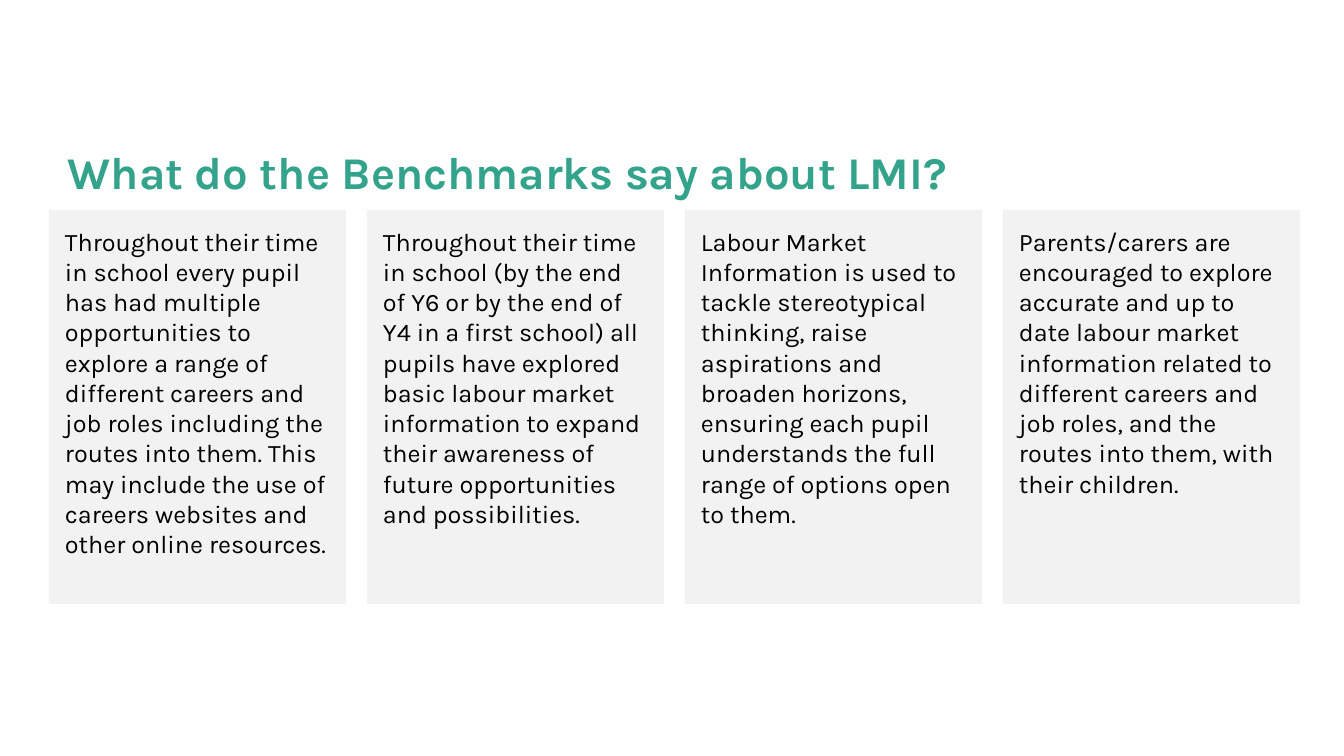
from pptx import Presentation
from pptx.dml.color import RGBColor
from pptx.enum.shapes import MSO_SHAPE as Shape
from pptx.enum.text import MSO_ANCHOR as Anchor, PP_ALIGN as Align
from pptx.util import Pt

PX = 914400 / 100.8
COLORS = {"title": "33A38C", "card": "F2F2F2", "text": "000000"}
TITLE_FONT = {"name": "Karla", "size": Pt(32.4), "bold": True}
CARD_FONT = {"name": "Karla", "size": Pt(18), "bold": False}
CARD_INSET = 16
CARD_GAP = 21

TITLE = "What do the Benchmarks say about LMI?"
BENCHMARKS = [
    "Throughout their time in school every pupil has had multiple opportunities "
    "to explore a range of different careers and job roles including the routes "
    "into them. This may include the use of careers websites and other online "
    "resources.",
    "Throughout their time in school (by the end of Y6 or by the end of Y4 in a "
    "first school) all pupils have explored basic labour market information to "
    "expand their awareness of future opportunities and possibilities.",
    "Labour Market Information is used to tackle stereotypical thinking, raise "
    "aspirations and broaden horizons, ensuring each pupil understands the full "
    "range of options open to them.",
    "Parents/carers are encouraged to explore accurate and up to date labour "
    "market information related to different careers and job roles, and the "
    "routes into them, with their children.",
]


def px(*lengths):
    return [round(length * PX) for length in lengths]


def color(name):
    return RGBColor.from_string(COLORS[name])


def set_all(target, values):
    for name, value in values.items():
        setattr(target, name, value)


def write(frame, text, font, color_name):
    frame.word_wrap = True
    para = frame.paragraphs[0]
    para.alignment = Align.LEFT
    span = para.add_run()
    span.text = text
    set_all(span.font, font)
    span.font.color.rgb = color(color_name)
    return para


def add_title(page, box):
    frame = page.shapes.add_textbox(*px(*box)).text_frame
    frame.vertical_anchor = Anchor.BOTTOM
    write(frame, TITLE, TITLE_FONT, "title").line_spacing = 0.9


def add_card(page, box, text):
    card = page.shapes.add_shape(Shape.RECTANGLE, *px(*box))
    card.shadow.inherit = False
    card.fill.solid()
    card.fill.fore_color.rgb = color("card")
    card.line.fill.background()
    frame = card.text_frame
    inset = px(CARD_INSET)[0]
    sides = ("left", "top", "right", "bottom")
    set_all(frame, {f"margin_{side}": inset for side in sides})
    frame.vertical_anchor = Anchor.TOP
    write(frame, text, CARD_FONT, "text").space_after = Pt(12)


def add_cards(page, box):
    """Share the width of the box equally among the benchmark cards."""
    left, top, width, height = box
    count = len(BENCHMARKS)
    card_width = (width - (count - 1) * CARD_GAP) // count
    for index, text in enumerate(BENCHMARKS):
        card_left = left + index * (card_width + CARD_GAP)
        add_card(page, (card_left, top, card_width, height), text)


def main():
    deck = Presentation()
    deck.slide_width, deck.slide_height = px(1344, 756)
    page = deck.slides.add_slide(deck.slide_layouts[6])
    add_title(page, (58, 139, 945, 65))
    add_cards(page, (49, 210, 1251, 394))
    deck.save("out.pptx")


if __name__ == "__main__":
    main()
